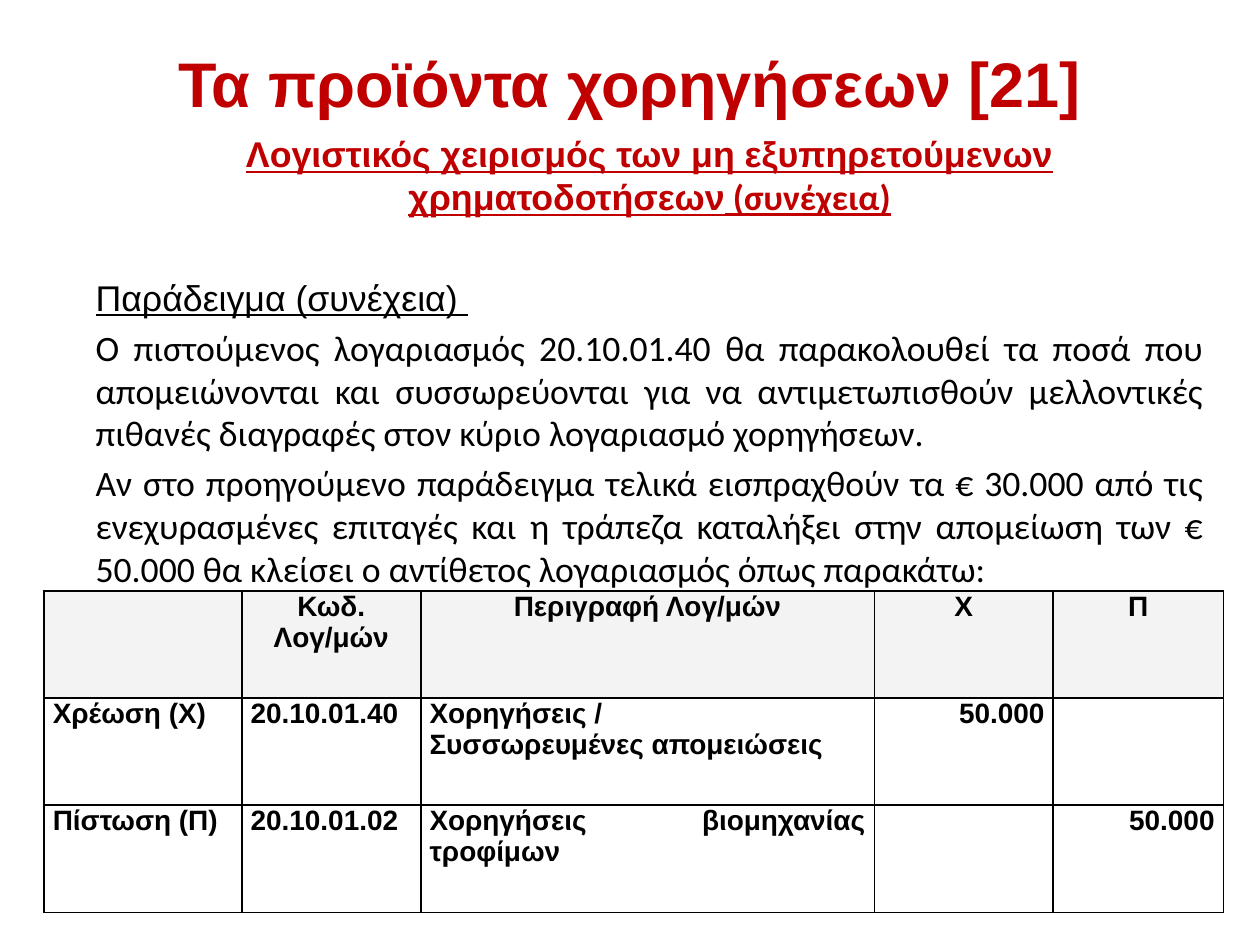
from lxml import etree
from pptx import Presentation
from pptx.dml.color import RGBColor
from pptx.enum.text import MSO_ANCHOR, PP_ALIGN
from pptx.oxml.ns import qn
from pptx.util import Inches, Pt

LEFT, CENTER, RIGHT = PP_ALIGN.LEFT, PP_ALIGN.CENTER, PP_ALIGN.RIGHT
JUSTIFY = PP_ALIGN.JUSTIFY
MIDDLE, TOP = MSO_ANCHOR.MIDDLE, MSO_ANCHOR.TOP
COLORS = {"red": "C00000", "black": "000000", "header": "F3F3F3"}
HEAD, BODY = "Arial", "Calibri"

TITLE = "Τα προϊόντα χορηγήσεων [21]"
SUBTITLE = "Λογιστικός χειρισμός των μη εξυπηρετούμενων χρηματοδοτήσεων"
EXAMPLE = "Παράδειγμα (συνέχεια) "
PARAGRAPHS = [
    "Ο πιστούμενος λογαριασμός 20.10.01.40 θα παρακολουθεί τα ποσά που "
    "απομειώνονται και συσσωρεύονται για να αντιμετωπισθούν μελλοντικές "
    "πιθανές διαγραφές στον κύριο λογαριασμό χορηγήσεων.",
    "Αν στο προηγούμενο παράδειγμα τελικά εισπραχθούν τα € 30.000 από τις "
    "ενεχυρασμένες επιταγές και η τράπεζα καταλήξει στην απομείωση των "
    "€ 50.000 θα κλείσει ο αντίθετος λογαριασμός όπως παρακάτω:",
]
ENTRIES = [
    ["", "Κωδ. Λογ/μών", "Περιγραφή Λογ/μών", "Χ", "Π"],
    ["Χρέωση (Χ)", "20.10.01.40", "Χορηγήσεις /\nΣυσσωρευμένες απομειώσεις", "50.000", ""],
    ["Πίστωση (Π)", "20.10.01.02", "Χορηγήσεις βιομηχανίας τροφίμων", "", "50.000"],
]
COLUMN_WIDTHS = [1.57, 1.42, 3.6, 1.42, 1.35]
COLUMN_ALIGNS = [JUSTIFY, JUSTIFY, JUSTIFY, RIGHT, RIGHT]
ROW_HEIGHT = 0.85


class SlideWriter:
    def __init__(self, page):
        self.page = page

    def add_span(self, para, text, size, font, color="black", bold=False, underline=False):
        span = para.add_run()
        span.text = text
        span.font.size = Pt(size)
        span.font.name = font
        span.font.bold = bold
        span.font.underline = underline
        span.font.color.rgb = RGBColor.from_string(COLORS[color])

    def add_text(self, left, top, width, height, paragraphs, anchor=TOP):
        """Each paragraph is (alignment, space before, list of span settings)."""
        box = self.page.shapes.add_textbox(
            Inches(left), Inches(top), Inches(width), Inches(height))
        frame = box.text_frame
        frame.word_wrap = True
        frame.vertical_anchor = anchor
        for index, (align, space, spans) in enumerate(paragraphs):
            para = frame.add_paragraph() if index else frame.paragraphs[0]
            para.alignment = align
            para.space_before = Pt(space)
            for settings in spans:
                self.add_span(para, **settings)

    def add_borders(self, cell):
        properties = cell._tc.get_or_add_tcPr()
        for side in ("lnL", "lnR", "lnT", "lnB"):
            line = etree.SubElement(properties, qn(f"a:{side}"), w=str(Pt(1)))
            fill = etree.SubElement(line, qn("a:solidFill"))
            etree.SubElement(fill, qn("a:srgbClr"), val=COLORS["black"])

    def fill_cell(self, cell, text, align, header):
        cell.margin_left = cell.margin_right = Inches(0.07)
        cell.margin_top = cell.margin_bottom = 0
        self.add_borders(cell)
        if header:
            cell.fill.solid()
            cell.fill.fore_color.rgb = RGBColor.from_string(COLORS["header"])
        else:
            cell.fill.background()
        frame = cell.text_frame
        for index, line in enumerate(text.split("\n") if text else []):
            para = frame.add_paragraph() if index else frame.paragraphs[0]
            para.alignment = align
            self.add_span(para, line, 16, HEAD, bold=True)

    def add_table(self, left, top, rows, widths, aligns, row_height):
        table = self.page.shapes.add_table(
            len(rows), len(widths), Inches(left), Inches(top),
            Inches(sum(widths)), Inches(row_height * len(rows))).table
        table.horz_banding = False
        for column, width in zip(table.columns, widths):
            column.width = Inches(width)
        for r, texts in enumerate(rows):
            table.rows[r].height = Inches(row_height)
            for c, text in enumerate(texts):
                align = aligns[c] if r else CENTER
                self.fill_cell(table.cell(r, c), text, align, header=r == 0)


def main():
    deck = Presentation()
    deck.slide_width, deck.slide_height = Inches(10), Inches(7.5)
    writer = SlideWriter(deck.slides.add_slide(deck.slide_layouts[6]))

    title = dict(text=TITLE, size=36, font=HEAD, color="red", bold=True)
    writer.add_text(0.5, 0.3, 9, 0.7, [(CENTER, 0, [title])], MIDDLE)

    subtitle = dict(size=20.4, color="red", bold=True, underline=True)
    example = dict(text=EXAMPLE, size=20.4, font=HEAD, underline=True)
    paragraphs = [
        (CENTER, 0, [dict(subtitle, text=SUBTITLE, font=HEAD),
                     dict(subtitle, text=" (συνέχεια)", font=BODY)]),
        (LEFT, 33, [example]),
    ]
    paragraphs += [(JUSTIFY, 4, [dict(text=text, size=20.4, font=BODY)])
                   for text in PARAGRAPHS]
    writer.add_text(0.66, 1, 8.99, 3.54, paragraphs)

    writer.add_table(0.35, 4.69, ENTRIES, COLUMN_WIDTHS, COLUMN_ALIGNS, ROW_HEIGHT)
    deck.save("out.pptx")


if __name__ == "__main__":
    main()
